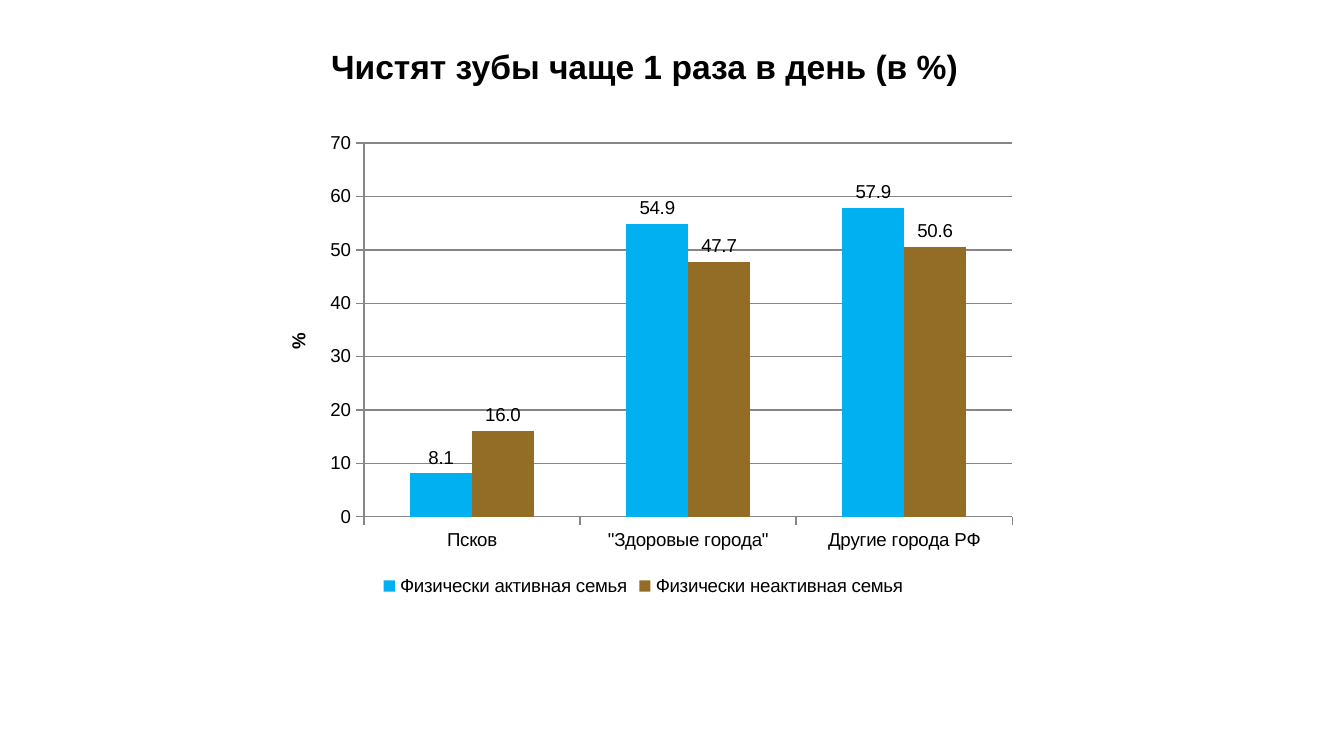
"""Build a slide comparing tooth brushing in active and inactive families."""
from dataclasses import dataclass

from pptx import Presentation
from pptx.chart.data import CategoryChartData
from pptx.dml.color import RGBColor
from pptx.enum.chart import XL_CHART_TYPE, XL_LABEL_POSITION, XL_LEGEND_POSITION, XL_TICK_MARK
from pptx.enum.text import MSO_ANCHOR, MSO_AUTO_SIZE, PP_ALIGN
from pptx.oxml.ns import qn
from pptx.util import Pt

COLUMNS = XL_CHART_TYPE.COLUMN_CLUSTERED
ABOVE = XL_LABEL_POSITION.OUTSIDE_END
BOTTOM = XL_LEGEND_POSITION.BOTTOM
OUTSIDE = XL_TICK_MARK.OUTSIDE
CENTER = PP_ALIGN.CENTER
TOP = MSO_ANCHOR.TOP
NO_FIT = MSO_AUTO_SIZE.NONE

EMU_PER_PX = 9525
TITLE_ONLY = 5


@dataclass(frozen=True)
class Theme:
    """Colours, font and type sizes of the slide."""
    font: str = "Arial"
    ink: str = "000000"
    grid: str = "868686"
    active: str = "00B0F0"
    inactive: str = "936C26"
    title_size: int = 18
    chart_size: int = 10


def px(*lengths):
    """Turn px lengths into EMU."""
    return [length * EMU_PER_PX for length in lengths]


def format_font(font, family, size, color, bold=False):
    """Apply the type settings to a font."""
    font.name, font.size, font.bold = family, Pt(size), bold
    font.color.rgb = RGBColor.from_string(color)


def write(frame, text, align=CENTER, **style):
    """Put one formatted line of text into a text frame."""
    paragraph = frame.paragraphs[0]
    paragraph.alignment = align
    run = paragraph.add_run()
    run.text = text
    format_font(run.font, **style)


class SlideBuilder:
    """Holds the theme and the current slide."""

    def __init__(self, slide, theme):
        self.slide = slide
        self.theme = theme

    def title(self, text, left, top, width, height):
        """Fill and move the title placeholder."""
        heading = self.slide.shapes.title
        heading.left, heading.top, heading.width, heading.height = px(left, top, width, height)
        frame = heading.text_frame
        frame.word_wrap, frame.auto_size, frame.vertical_anchor = True, NO_FIT, TOP
        write(frame, text, family=self.theme.font, size=self.theme.title_size,
              color=self.theme.ink, bold=True)

    def column_chart(self, categories, series, unit, left, top, width, height):
        """Add a clustered column chart with value labels."""
        theme = self.theme
        data = CategoryChartData(number_format="0.0")
        data.categories = categories
        for name, values, _ in series:
            data.add_series(name, values)
        chart = self.slide.shapes.add_chart(COLUMNS, *px(left, top, width, height), data).chart
        chart.has_title = False
        format_font(chart.font, theme.font, theme.chart_size, theme.ink)
        chart.has_legend = True
        chart.legend.position = BOTTOM
        chart.legend.include_in_layout = False

        plot = chart.plots[0]
        plot.gap_width, plot.overlap, plot.vary_by_categories = 150, 0, False
        for bars, (_, _, color) in zip(plot.series, series):
            bars.format.fill.solid()
            bars.format.fill.fore_color.rgb = RGBColor.from_string(color)
            labels = bars.data_labels
            labels.show_value, labels.position = True, ABOVE
            labels.number_format, labels.number_format_is_linked = "0.0", False

        value_axis = chart.value_axis
        value_axis.has_major_gridlines = True
        value_axis.tick_labels.number_format = "0"
        value_axis.tick_labels.number_format_is_linked = False
        write(value_axis.axis_title.text_frame, unit, family=theme.font,
              size=theme.chart_size, color=theme.ink, bold=True)
        value_axis.axis_title.element.find(".//" + qn("a:bodyPr")).set("rot", "-5400000")
        for axis in (chart.category_axis, value_axis):
            axis.major_tick_mark = OUTSIDE
        for part in (chart.category_axis, value_axis, value_axis.major_gridlines):
            part.format.line.color.rgb = RGBColor.from_string(theme.grid)
            part.format.line.width = Pt(0.75)


def main():
    """Build and save the presentation."""
    theme = Theme()
    presentation = Presentation()
    presentation.slide_width, presentation.slide_height = px(960, 540)
    slide = presentation.slides.add_slide(presentation.slide_layouts[TITLE_ONLY])
    builder = SlideBuilder(slide, theme)
    builder.title("Чистят зубы чаще 1 раза в день (в %)", 170, 28, 581, 45)
    cities = ["Псков", '"Здоровые города"', "Другие города РФ"]
    families = [
        ("Физически активная семья", (8.1, 54.9, 57.9), theme.active),
        ("Физически неактивная семья", (16, 47.7, 50.6), theme.inactive),
    ]
    builder.column_chart(cities, families, "%", 185, 88, 549, 342)
    presentation.save("out.pptx")


if __name__ == "__main__":
    main()
